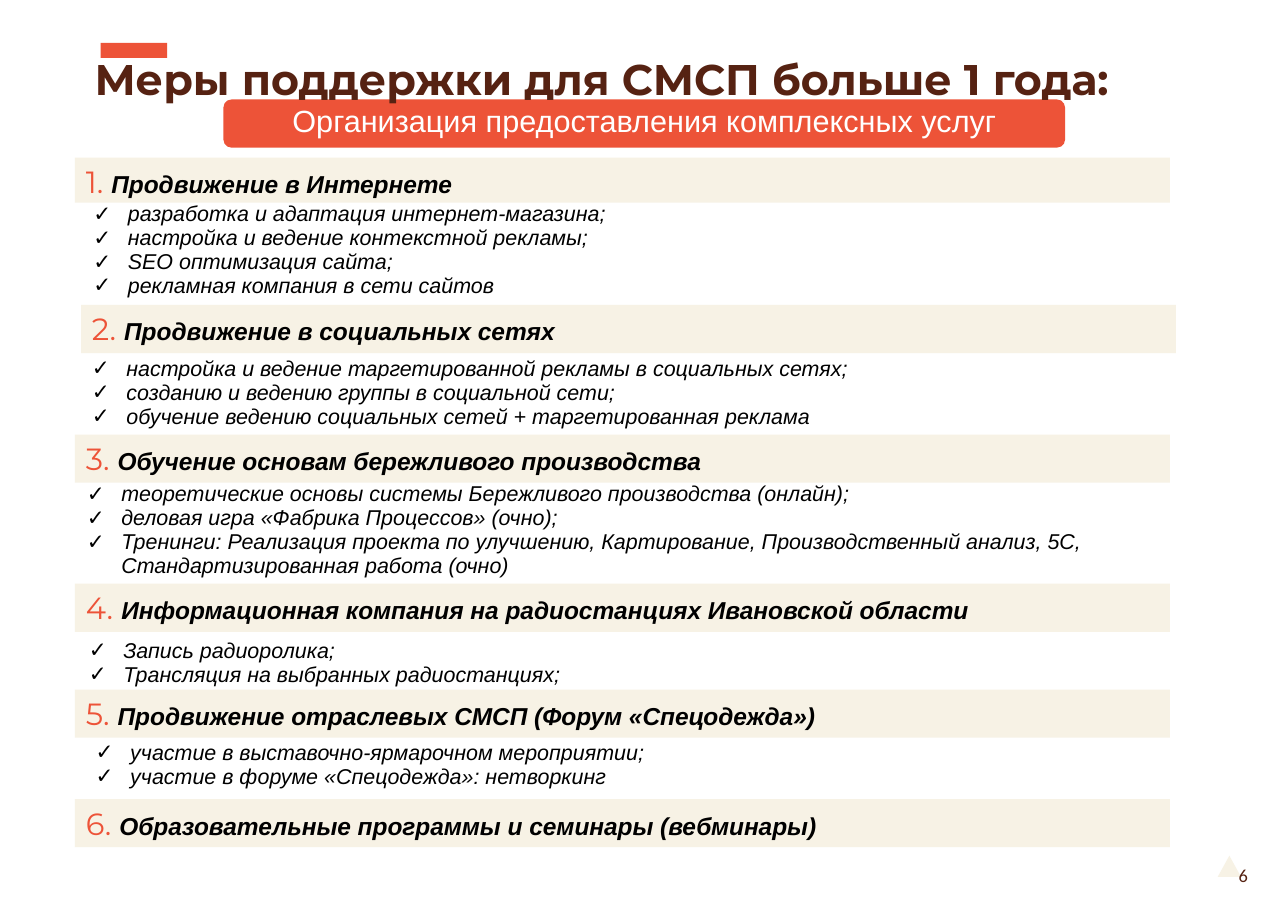
from lxml import etree
from pptx import Presentation
from pptx.dml.color import RGBColor
from pptx.enum.shapes import MSO_SHAPE
from pptx.enum.text import MSO_ANCHOR, PP_ALIGN
from pptx.oxml.ns import qn
from pptx.util import Pt

RECT = MSO_SHAPE.RECTANGLE
ROUND = MSO_SHAPE.ROUNDED_RECTANGLE
TRIANGLE = MSO_SHAPE.ISOSCELES_TRIANGLE
TOP, MIDDLE = MSO_ANCHOR.TOP, MSO_ANCHOR.MIDDLE
LEFT, CENTER = PP_ALIGN.LEFT, PP_ALIGN.CENTER

ORANGE, CREAM, BROWN = "ED5338", "F7F2E5", "562212"
BLACK, WHITE = "000000", "FFFFFF"
INDENT = 22.5

# Each section: bar box, heading, list box, list items
SECTIONS = [
    ((49, 103, 715.5, 29.5), "Продвижение в Интернете",
     (54, 129, 543, 70.5),
     ["разработка и адаптация интернет-магазина;",
      "настройка и ведение контекстной рекламы;",
      "SЕО оптимизация сайта;",
      "рекламная компания в сети сайтов"]),
    ((53, 199.3, 715.5, 31.5), "Продвижение в социальных сетях",
     (53, 230, 645, 54.5),
     ["настройка и ведение таргетированной рекламы в социальных сетях;",
      "созданию и ведению группы в социальной сети;",
      "обучение ведению социальных сетей + таргетированная реклама"]),
    ((49, 284, 715.5, 31.5), "Обучение основам бережливого производства",
     (49.7, 312, 731, 70.5),
     ["теоретические основы системы Бережливого производства (онлайн);",
      "деловая игра «Фабрика Процессов» (очно);",
      "Тренинги: Реализация проекта по улучшению, Картирование, "
      "Производственный анализ, 5C, Стандартизированная работа (очно)"]),
    ((49, 381.5, 715.5, 31.5),
     "Информационная компания на радиостанциях Ивановской области",
     (51, 414.3, 731, 39),
     ["Запись радиоролика;",
      "Трансляция на выбранных радиостанциях;"]),
    ((49, 450.7, 715.5, 31.5),
     "Продвижение отраслевых СМСП (Форум «Спецодежда»)",
     (55.5, 481, 731, 39),
     ["участие в выставочно-ярмарочном мероприятии;",
      "участие в форуме «Спецодежда»: нетворкинг"]),
    ((49, 522.3, 715.5, 31.5),
     "Образовательные программы и семинары (вебминары)", None, []),
]


def color(code):
    return RGBColor.from_string(code)


def add_block(slide, kind, box, fill):
    shape = slide.shapes.add_shape(kind, *map(Pt, box))
    shape.shadow.inherit = False
    shape.fill.solid()
    shape.fill.fore_color.rgb = color(fill)
    shape.line.fill.background()
    return shape


def set_frame(shape, anchor=TOP):
    frame = shape.text_frame
    frame.word_wrap = True
    frame.vertical_anchor = anchor
    return frame


def add_run(para, text, size, name, code, bold=False, italic=False):
    run = para.add_run()
    run.text = text
    font = run.font
    font.size, font.name = Pt(size), name
    font.bold, font.italic = bold, italic
    font.color.rgb = color(code)


def add_label(slide, box, text, size, name, code, align=LEFT, anchor=TOP,
              space=1.0, bold=False):
    shape = slide.shapes.add_textbox(*map(Pt, box))
    para = set_frame(shape, anchor).paragraphs[0]
    para.alignment, para.line_spacing = align, space
    add_run(para, text, size, name, code, bold)


def add_heading(slide, box, number, text):
    bar = add_block(slide, RECT, box, CREAM)
    para = set_frame(bar).paragraphs[0]
    para.alignment = LEFT
    add_run(para, f"{number}. ", 20, "Montserrat", ORANGE)
    add_run(para, text, 16, "Arial", BLACK, bold=True, italic=True)


def add_check(para):
    """Give the paragraph a hanging black check mark."""
    props = para._p.get_or_add_pPr()
    props.set("marL", str(Pt(INDENT)))
    props.set("indent", str(-Pt(INDENT)))
    tint = etree.SubElement(props, qn("a:buClr"))
    etree.SubElement(tint, qn("a:srgbClr"), val=BLACK)
    etree.SubElement(props, qn("a:buFont"), typeface="Arial")
    etree.SubElement(props, qn("a:buChar"), char="✓")


def add_list(slide, box, items):
    frame = set_frame(slide.shapes.add_textbox(*map(Pt, box)))
    for index, item in enumerate(items):
        para = frame.add_paragraph() if index else frame.paragraphs[0]
        add_check(para)
        para.line_spacing = 0.93
        add_run(para, item, 14, "Arial", BLACK, italic=True)


def main():
    deck = Presentation()
    deck.slide_width, deck.slide_height = Pt(841.68), Pt(595.44)
    slide = deck.slides.add_slide(deck.slide_layouts[6])

    add_block(slide, TRIANGLE, (795.8, 559.3, 15.2, 13.8), CREAM)
    add_label(slide, (794, 561.6, 37, 21.6), "6", 12, "Calibri", BROWN, CENTER)
    add_block(slide, RECT, (65.8, 28, 43.4, 9.8), ORANGE)
    add_block(slide, ROUND, (146, 65, 550, 31.5), ORANGE)
    add_label(slide, (98, 67, 646.5, 28),
              "Организация предоставления комплексных услуг",
              20, "Arial", WHITE, CENTER, space=0.85)
    add_label(slide, (54.7, 32.4, 752.4, 41.8),
              "Меры поддержки для СМСП больше 1 года:",
              28, "Montserrat", BROWN, anchor=MIDDLE, space=0.9, bold=True)

    for number, (bar, title, box, items) in enumerate(SECTIONS, 1):
        add_heading(slide, bar, number, title)
        if items:
            add_list(slide, box, items)

    deck.save("out.pptx")


if __name__ == "__main__":
    main()
